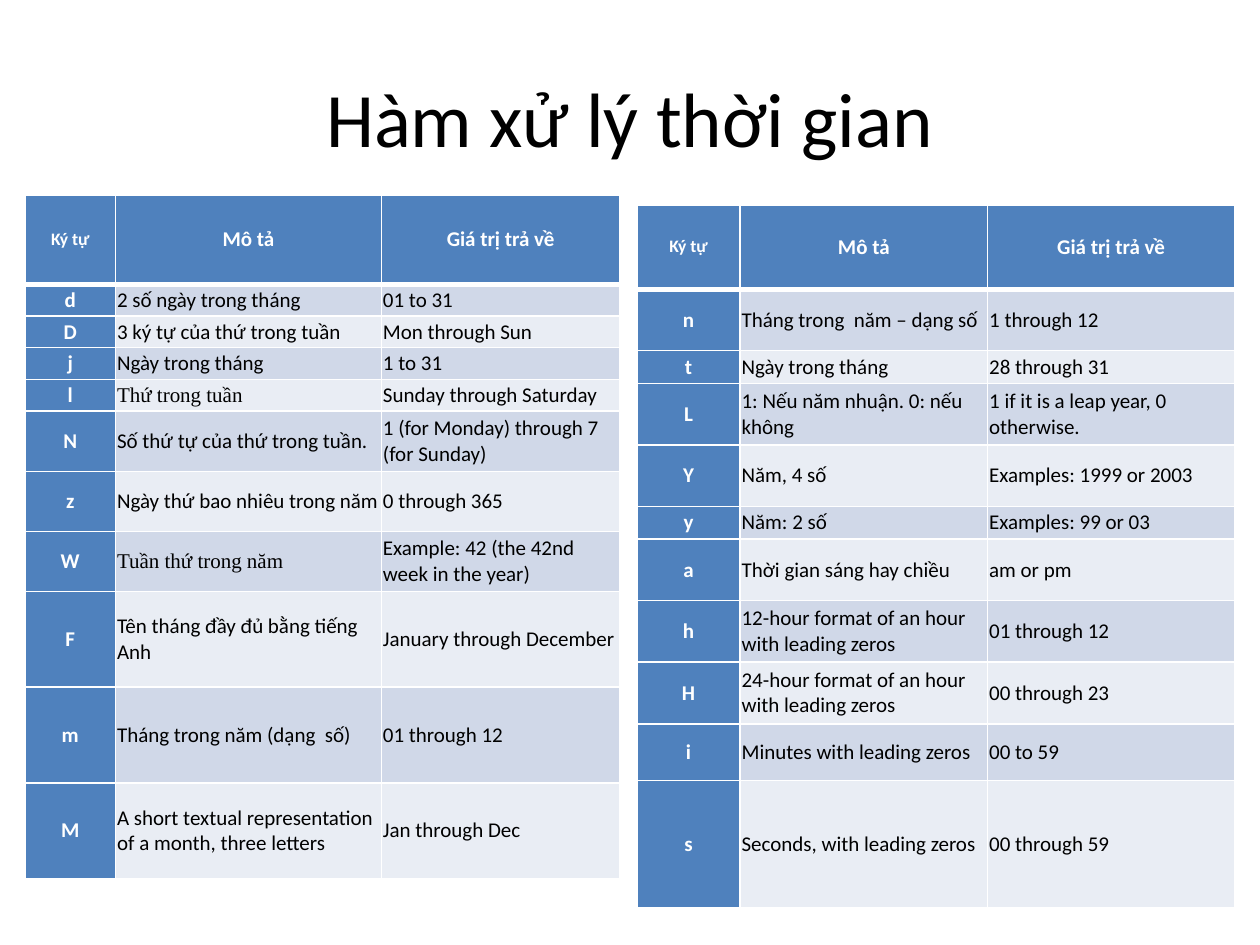
"""Build a slide with two tables of date and time format characters."""
from dataclasses import dataclass

from lxml import etree
from pptx import Presentation
from pptx import util as u
from pptx.dml.color import RGBColor
from pptx.enum import text
from pptx.oxml.ns import qn


@dataclass(frozen=True)
class Theme:
    font: str = "Calibri"
    serif: str = "Times New Roman"
    title_size: int = 44
    body_size: int = 12
    small_size: int = 10
    black: str = "000000"
    white: str = "FFFFFF"
    accent: str = "4F81BD"
    bands: tuple = ("D0D8E8", "E9EDF4")
    thin: float = 1
    thick: float = 3
    margin: float = 0.03


THEME = Theme()
TITLE = "Hàm xử lý thời gian"
HEADER = ("Ký tự", "Mô tả", "Giá trị trả về")
SERIF_TEXTS = {"Thứ trong tuần", "Tuần thứ trong năm"}

DAY_ROWS = [
    ("d", "2 số ngày trong tháng", "01 to 31"),
    ("D", "3 ký tự của thứ trong tuần", "Mon through Sun"),
    ("j", "Ngày trong tháng", "1 to 31"),
    ("l", "Thứ trong tuần", "Sunday through Saturday"),
    ("N", "Số thứ tự của thứ trong tuần.", "1 (for Monday) through 7 (for Sunday)"),
    ("z", "Ngày thứ bao nhiêu trong năm", "0 through 365"),
    ("W", "Tuần thứ trong năm", "Example: 42 (the 42nd week in the year)"),
    ("F", "Tên tháng đầy đủ bằng tiếng Anh", "January through December"),
    ("m", "Tháng trong năm (dạng  số)", "01 through 12"),
    ("M", "A short textual representation of a month, three letters", "Jan through Dec"),
]
TIME_ROWS = [
    ("n", "Tháng trong  năm – dạng số", "1 through 12"),
    ("t", "Ngày trong tháng", "28 through 31"),
    ("L", "1: Nếu năm nhuận. 0: nếu không", "1 if it is a leap year, 0 otherwise."),
    ("Y", "Năm, 4 số", "Examples: 1999 or 2003"),
    ("y", "Năm: 2 số", "Examples: 99 or 03"),
    ("a", "Thời gian sáng hay chiều", "am or pm"),
    ("h", "12-hour format of an hour with leading zeros", "01 through 12"),
    ("H", "24-hour format of an hour with leading zeros", "00 through 23"),
    ("i", "Minutes with leading zeros", "00 to 59"),
    ("s", "Seconds, with leading zeros", "00 through 59"),
]
TABLES = [
    {
        "rows": DAY_ROWS,
        "corner": (0.5, 3.93),
        "widths": (1.83, 5.36, 4.81),
        "heights": [1.8] + [0.64] * 4 + [1.21] * 3 + [1.93] * 3,
    },
    {
        "rows": TIME_ROWS,
        "corner": (12.84, 4.13),
        "widths": (2.08, 4.99, 4.98),
        "heights": [1.7, 1.24, 0.66, 1.24, 1.24, 0.66] + [1.24] * 3 + [1.14, 2.57],
    },
]


def style_text(para, size, color, bold=False, font=THEME.font):
    for span in para.runs:
        span.font.name = font
        span.font.size = u.Pt(size)
        span.font.bold = bold
        span.font.color.rgb = RGBColor.from_string(color)


def add_borders(cell, row):
    properties = cell._tc.get_or_add_tcPr()
    widths = {side: THEME.thin for side in "LRTB"}
    if row == 0:
        widths["B"] = THEME.thick
    elif row == 1:
        widths["T"] = THEME.thick
    for side, width in widths.items():
        line = etree.SubElement(properties, qn(f"a:ln{side}"), w=str(u.Pt(width)))
        fill = etree.SubElement(line, qn("a:solidFill"))
        etree.SubElement(fill, qn("a:srgbClr"), val=THEME.white)


def format_cell(cell, words, row, column):
    heading = row == 0 or column == 0
    cell.text_frame.text = words
    cell.vertical_anchor = text.MSO_ANCHOR.MIDDLE
    cell.margin_left = cell.margin_right = u.Cm(THEME.margin)
    cell.margin_top = cell.margin_bottom = u.Cm(THEME.margin)
    add_borders(cell, row)
    cell.fill.solid()
    fill = THEME.accent if heading else THEME.bands[(row - 1) % 2]
    cell.fill.fore_color.rgb = RGBColor.from_string(fill)

    para = cell.text_frame.paragraphs[0]
    para.alignment = text.PP_ALIGN.CENTER if heading else text.PP_ALIGN.LEFT
    style_text(
        para,
        THEME.small_size if row == column == 0 else THEME.body_size,
        THEME.white if heading else THEME.black,
        bold=heading,
        font=THEME.serif if words in SERIF_TEXTS else THEME.font,
    )


def add_character_table(page, rows, corner, widths, heights):
    content = [HEADER, *rows]
    left, top = map(u.Cm, corner)
    frame = page.shapes.add_table(
        len(content), len(HEADER), left, top, u.Cm(sum(widths)), u.Cm(sum(heights))
    )
    table = frame.table
    table.first_col = True
    for column, width in zip(table.columns, widths):
        column.width = u.Cm(width)
    for row, height in zip(table.rows, heights):
        row.height = u.Cm(height)
    for row, entries in enumerate(content):
        for column, words in enumerate(entries):
            format_cell(table.cell(row, column), words, row, column)


def add_title(page):
    box = page.shapes.title
    box.left, box.top, box.width, box.height = map(u.Cm, (1.27, 0.76, 22.86, 3.18))
    box.text_frame.text = TITLE
    box.text_frame.vertical_anchor = text.MSO_ANCHOR.MIDDLE
    para = box.text_frame.paragraphs[0]
    para.alignment = text.PP_ALIGN.CENTER
    style_text(para, THEME.title_size, THEME.black)


def main():
    deck = Presentation()
    deck.slide_width, deck.slide_height = u.Cm(25.4), u.Cm(19.05)
    page = deck.slides.add_slide(deck.slide_layouts.get_by_name("Title Only"))
    add_title(page)
    for table in TABLES:
        add_character_table(page, **table)
    deck.save("out.pptx")


if __name__ == "__main__":
    main()
